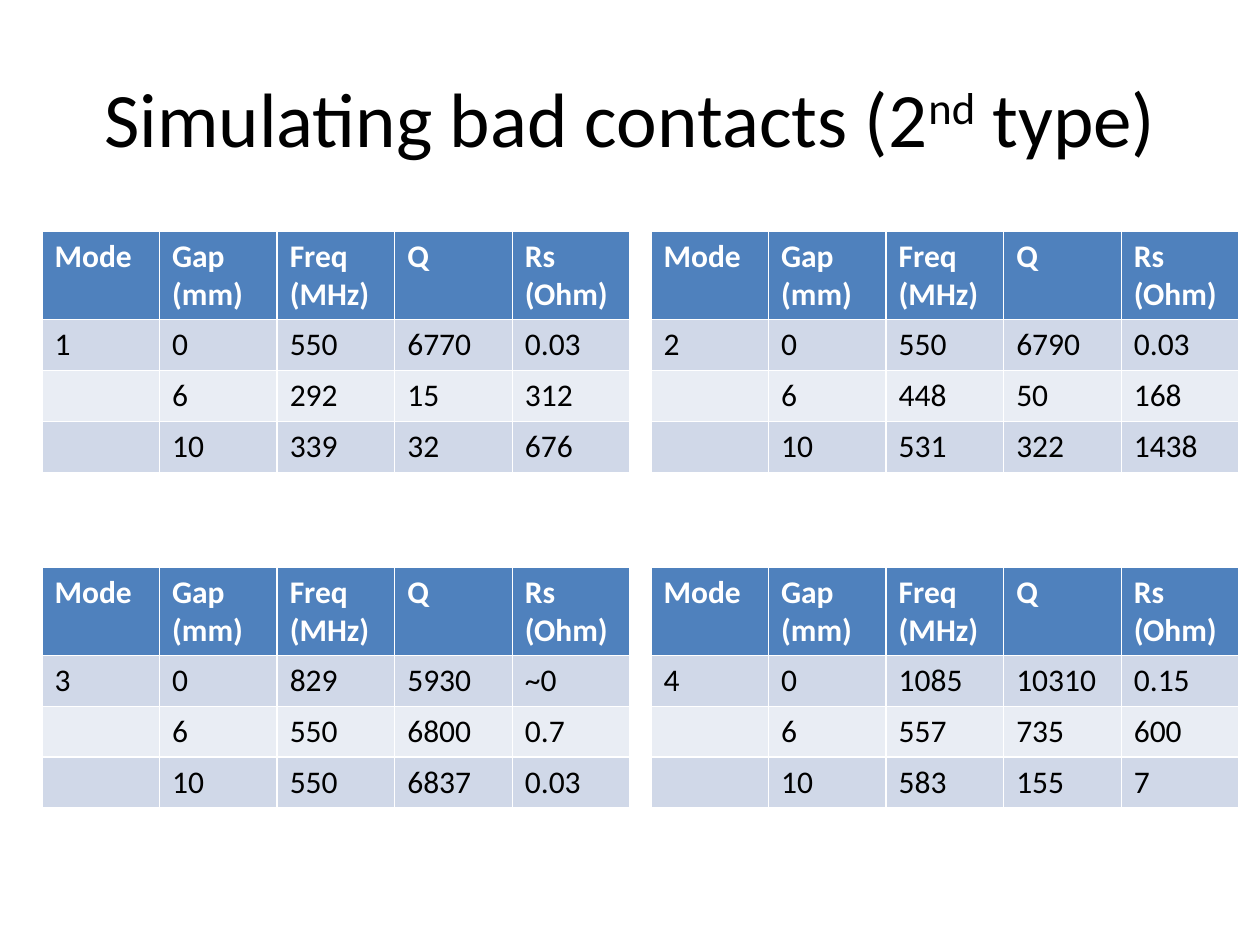
from pptx import Presentation
from pptx import util as u
from pptx.dml.color import RGBColor
from pptx.enum import text

PX = u.Inches(1) / 126
FONT = "Calibri"
COLORS = {
    "header": "4F81BD",
    "odd_row": "D0D8E8",
    "even_row": "E9EDF4",
    "header_text": "FFFFFF",
    "text": "000000",
}
HEADINGS = ["Mode", "Gap (mm)", "Freq (MHz)", "Q", "Rs (Ohm)"]
GAPS = ["0", "6", "10"]
MODES = {
    "1": [("550", "6770", "0.03"), ("292", "15", "312"), ("339", "32", "676")],
    "2": [("550", "6790", "0.03"), ("448", "50", "168"), ("531", "322", "1438")],
    "3": [("829", "5930", "~0"), ("550", "6800", "0.7"), ("550", "6837", "0.03")],
    "4": [("1085", "10310", "0.15"), ("557", "735", "600"), ("583", "155", "7")],
}
TABLE_LEFT, TABLE_TOP = 42, 231
TABLE_WIDTH, TABLE_STEP_X, TABLE_STEP_Y = 588, 609, 336
HEADER_HEIGHT, ROW_HEIGHT = 88, 51


def px(length):
    return u.Emu(round(length * PX))


def color(name):
    return RGBColor.from_string(COLORS[name])


def style_font(para, size, color_name, bold=False):
    para.font.name = FONT
    para.font.size = u.Pt(size)
    para.font.bold = bold
    para.font.color.rgb = color(color_name)


def add_title(page):
    box = page.shapes.add_textbox(px(63), px(38), px(1134), px(158))
    frame = box.text_frame
    frame.word_wrap = True
    frame.vertical_anchor = text.MSO_ANCHOR.MIDDLE
    para = frame.paragraphs[0]
    para.alignment = text.PP_ALIGN.CENTER
    style_font(para, 44, "text")
    for words, baseline in [("Simulating bad contacts (2", 0), ("nd", 30000), (" type)", 0)]:
        span = para.add_run()
        span.text = words
        if baseline:
            span._r.get_or_add_rPr().set("baseline", str(baseline))


def fill_cell(cell, words, fill, text_color, bold):
    cell.fill.solid()
    cell.fill.fore_color.rgb = color(fill)
    cell.text = words
    style_font(cell.text_frame.paragraphs[0], 18, text_color, bold)


def add_mode_table(page, left, top, mode, results):
    rows = [HEADINGS]
    for index, (gap, result) in enumerate(zip(GAPS, results)):
        rows.append([mode if index == 0 else "", gap, *result])
    height = HEADER_HEIGHT + ROW_HEIGHT * len(results)
    table = page.shapes.add_table(
        len(rows), len(HEADINGS), px(left), px(top), px(TABLE_WIDTH), px(height)
    ).table
    for row_index, row in enumerate(rows):
        is_header = row_index == 0
        table.rows[row_index].height = px(HEADER_HEIGHT if is_header else ROW_HEIGHT)
        band = "odd_row" if row_index % 2 else "even_row"
        fill = "header" if is_header else band
        text_color = "header_text" if is_header else "text"
        for column_index, words in enumerate(row):
            fill_cell(table.cell(row_index, column_index), words, fill, text_color, is_header)


def main():
    deck = Presentation()
    deck.slide_width, deck.slide_height = px(1260), px(945)
    page = deck.slides.add_slide(deck.slide_layouts[6])
    add_title(page)
    for index, (mode, results) in enumerate(MODES.items()):
        grid_row, grid_column = divmod(index, 2)
        left = TABLE_LEFT + grid_column * TABLE_STEP_X
        top = TABLE_TOP + grid_row * TABLE_STEP_Y
        add_mode_table(page, left, top, mode, results)
    deck.save("out.pptx")


if __name__ == "__main__":
    main()
